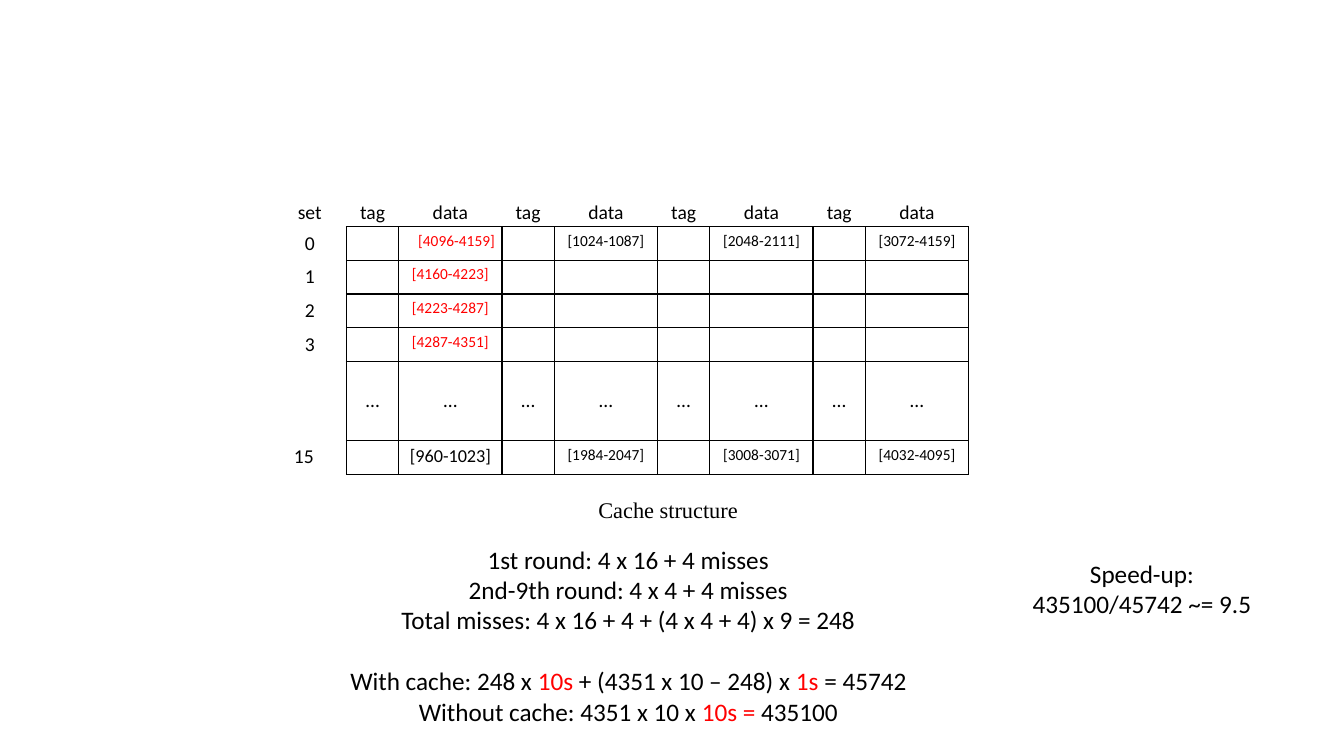
from lxml.etree import SubElement
from pptx import Presentation
from pptx.dml.color import RGBColor as Rgb
from pptx.enum.text import MSO_ANCHOR as Anchor, MSO_AUTO_SIZE as Auto, PP_ALIGN as Align
from pptx.oxml.ns import qn
from pptx.util import Cm, Pt

HUE = {"ink": "000000", "red": "FF0000"}
SANS, SERIF = "Calibri", "Times New Roman"

# Each way of the cache: data of sets 0-3, then (data, size) of set 15
WAYS = [
    (["", "[4160-4223]", "[4223-4287]", "[4287-4351]"], "red", ("[960-1023]", 13)),
    (["[1024-1087]", "", "", ""], "ink", ("[1984-2047]", 11)),
    (["[2048-2111]", "", "", ""], "ink", ("[3008-3071]", 11)),
    (["[3072-4159]", "", "", ""], "ink", ("[4032-4095]", 11)),
]
SETS = ["0", "1", "2", "3"]

# Lines of (text, colour) runs; the sums are two groups
MISSES = [
    [("1st round: 4 x 16 + 4 misses", "ink")],
    [("2nd-9th round: 4 x 4 + 4 misses", "ink")],
    [("Total misses: 4 x 16 + 4 + (4 x 4 + 4) x 9 = 248", "ink")],
]
TIMES = [
    [("With cache: 248 x ", "ink"), ("10s", "red"),
     (" + (4351 x 10 – 248) x ", "ink"), ("1s ", "red"), ("= 45742", "ink")],
    [("Without cache: 4351 x 10 x ", "ink"), ("10s = ", "red"), ("435100", "ink")],
]
SPEED = [[("Speed-up:", "ink")], [("435100/45742 ~= 9.5", "ink")]]

# Centimetres
LEFT, TOP = 8.73, 5
SET_W, TAG_W, DATA_W = 1.85, 1.32, 2.6
HEAD_H, ROW_H, GAP_H = 0.71, 0.85, 1.99
GAP_TOP = TOP + HEAD_H + len(SETS) * ROW_H
LAST_TOP = GAP_TOP + GAP_H

deck = Presentation()
deck.slide_width, deck.slide_height = Cm(33.87), Cm(19.05)
slide = deck.slides.add_slide(deck.slide_layouts[6])


def add_run(para, text, size, hue="ink", face=SANS):
    run = para.add_run()
    run.text = text
    run.font.size = Pt(size)
    run.font.name = face
    run.font.color.rgb = Rgb.from_string(HUE[hue])


def add_box(x, y, w, h, groups, size, align=Align.CENTER, face=SANS):
    """Add a text box; groups of lines stand one line apart."""
    box = slide.shapes.add_textbox(Cm(x), Cm(y), Cm(w), Cm(h))
    frame = box.text_frame
    frame.word_wrap = False
    frame.auto_size = Auto.SHAPE_TO_FIT_TEXT
    para = frame.paragraphs[0]
    for g, lines in enumerate(groups):
        for i, line in enumerate(lines):
            if g or i:
                para = frame.add_paragraph()
            if g and not i:
                para.space_before = Pt(size * 1.22)
            para.alignment = align
            for text, hue in line:
                add_run(para, text, size, hue, face)


def set_edges(cell, sides):
    """Draw the sides named by the letters L, R, T, B and clear the rest."""
    props = cell._tc.get_or_add_tcPr()
    for side in "LRTB":
        line = SubElement(props, qn("a:ln" + side), w=str(Pt(1)))
        if side in sides:
            fill = SubElement(line, qn("a:solidFill"))
            SubElement(fill, qn("a:srgbClr"), val=HUE["ink"])
        else:
            SubElement(line, qn("a:noFill"))


def add_grid(x, y, cols, rows, cells):
    """Add a table of (text, size, colour, edges, padded, middle) cells."""
    shape = slide.shapes.add_table(len(rows), len(cols), Cm(x), Cm(y),
                                   Cm(sum(cols)), Cm(sum(rows)))
    grid = shape.table
    grid.first_row = grid.horz_banding = False
    for col, w in zip(grid.columns, cols):
        col.width = Cm(w)
    for r, (h, line) in enumerate(zip(rows, cells)):
        grid.rows[r].height = Cm(h)
        for c, (text, size, hue, edges, padded, middle) in enumerate(line):
            cell = grid.cell(r, c)
            set_edges(cell, edges)
            cell.fill.background()
            cell.margin_left = cell.margin_right = Cm(0.25 if padded else 0)
            cell.margin_top = cell.margin_bottom = Cm(0.12 if padded else 0)
            cell.vertical_anchor = Anchor.MIDDLE if middle else Anchor.TOP
            if text:
                para = cell.text_frame.paragraphs[0]
                para.alignment = Align.CENTER
                add_run(para, text, size, hue)


def head(text, edges="B"):
    return text, 14, "ink", edges, False, True


def body(text, size=11, hue="ink", edges="LRTB", middle=False):
    return text, size, hue, edges, bool(text), middle


pair = [TAG_W, DATA_W]
for n, (ranges, hue, (last, size)) in enumerate(WAYS):
    x = LEFT + n * sum(pair)
    cells = [[head("tag"), head("data")]]
    cells += [[body(""), body(text, hue=hue)] for text in ranges]
    start, cols = x, pair
    if n == 0:
        start, cols = x - SET_W, [SET_W] + pair
        labels = [head("set", "")] + [body(s, 14, edges="R") for s in SETS]
        cells = [[label] + line for label, line in zip(labels, cells)]
    add_grid(start, TOP, cols, [HEAD_H] + [ROW_H] * len(SETS), cells)
    add_grid(x, GAP_TOP, pair, [GAP_H], [[body("…", 14, middle=True)] * 2])
    add_grid(x, LAST_TOP, pair, [ROW_H], [[body(""), body(last, size)]])

add_box(10.29, 5.69, 2.49, 0.74, [[[("[4096-4159]", "red")]]], 11, Align.LEFT)
add_box(7.16, 11.07, 1.02, 0.86, [[[("15", "ink")]]], 14, Align.LEFT)
add_box(14.83, 12.37, 4.17, 0.94, [[[("Cache structure", "ink")]]], 16, Align.LEFT, SERIF)
add_box(8.48, 13.59, 14.71, 5.64, [MISSES, TIMES], 18)
add_box(25.73, 13.94, 6.1, 1.8, [SPEED], 18)

deck.save("out.pptx")
